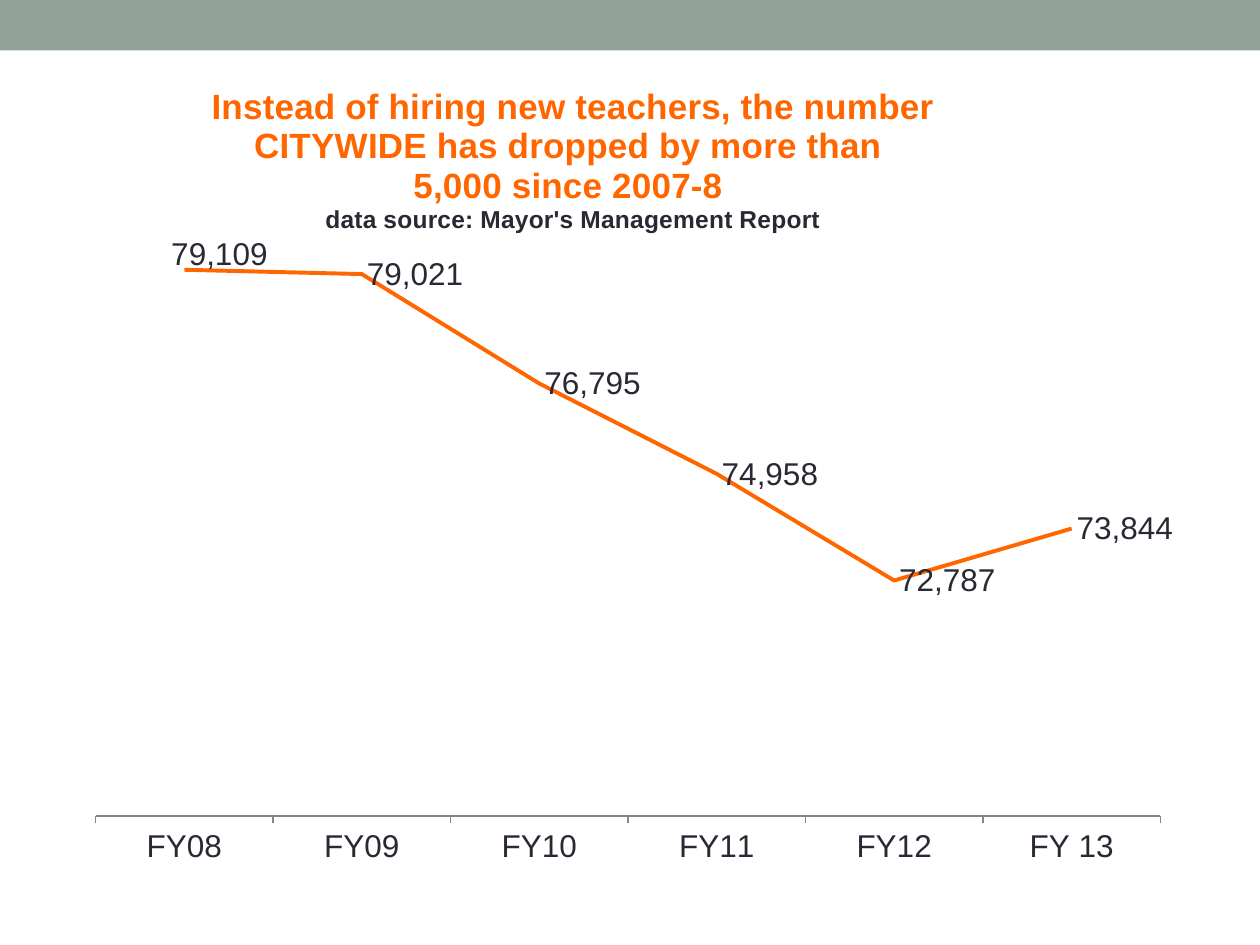
from dataclasses import dataclass

from lxml.etree import SubElement
from pptx import Presentation
from pptx.chart.data import CategoryChartData
from pptx.dml.color import RGBColor
from pptx.enum.chart import XL_CHART_TYPE as ChartType
from pptx.enum.chart import XL_LABEL_POSITION as LabelPos
from pptx.enum.chart import XL_TICK_MARK as Tick
from pptx.enum.shapes import MSO_SHAPE as Shape
from pptx.enum.text import PP_ALIGN as Align
from pptx.oxml.ns import qn
from pptx.util import Pt

ORANGE, DARK, SAGE, GREY = "FF6600", "292934", "93A299", "868686"


@dataclass
class TitleLine:
    text: str
    size: int
    color: str


TITLE = [
    TitleLine("Instead of hiring new teachers, the number CITYWIDE has dropped by more than ", 20, ORANGE),
    TitleLine("5,000 since 2007-8 ", 20, ORANGE),
    TitleLine("data source: Mayor's Management Report", 14, DARK),
]
TEACHERS = {
    "FY08": 79109,
    "FY09": 79021,
    "FY10": 76795,
    "FY11": 74958,
    "FY12": 72787,
    "FY 13": 73844,
}


def rgb(color: str) -> RGBColor:
    return RGBColor.from_string(color)


def set_font(font, size: int, color: str, bold: bool = False) -> None:
    for name, value in {"name": "Arial", "size": Pt(size), "bold": bold}.items():
        setattr(font, name, value)
    font.color.rgb = rgb(color)


def set_layout(parent, index: int, **values) -> None:
    for old in parent.findall(qn("c:layout")):
        parent.remove(old)
    layout = SubElement(parent, qn("c:layout"))
    manual = SubElement(layout, qn("c:manualLayout"))
    for tag, value in values.items():
        SubElement(manual, qn(f"c:{tag}")).set("val", str(value))
    parent.insert(index, layout)


def add_band(s) -> None:
    sp = s.shapes.add_shape(Shape.RECTANGLE, 0, 0, Pt(720), Pt(28.8))
    sp.shadow.inherit = False
    sp.fill.solid()
    sp.fill.fore_color.rgb = rgb(SAGE)
    sp.line.fill.background()


def add_title(chart) -> None:
    chart.has_title = True
    title = chart.chart_title
    title.include_in_layout = False
    tf = title.text_frame
    for i, line in enumerate(TITLE):
        p = tf.add_paragraph() if i else tf.paragraphs[0]
        p.alignment = Align.CENTER
        set_font(p.font, line.size, line.color, True)
        r = p.add_run()
        r.text = line.text
        set_font(r.font, line.size, line.color, True)
    set_layout(chart._chartSpace.chart.find(qn("c:title")), 1,
               xMode="edge", yMode="edge", x=0.13, y=0.01)


def format_axes(chart) -> None:
    cat = chart.category_axis
    cat.major_tick_mark = Tick.OUTSIDE
    cat.format.line.color.rgb = rgb(GREY)
    set_font(cat.tick_labels.font, 18, DARK)
    axis_format = {
        "minimum_scale": 68000,
        "maximum_scale": 80000,
        "has_major_gridlines": False,
        "visible": False,
    }
    for name, value in axis_format.items():
        setattr(chart.value_axis, name, value)


def format_series(chart) -> None:
    series = chart.plots[0].series[0]
    series.smooth = False
    series.format.line.color.rgb = rgb(ORANGE)
    series.format.line.width = Pt(2.25)
    labels = series.data_labels
    label_format = {
        "show_value": True,
        "number_format": "#,##0",
        "number_format_is_linked": False,
        "position": LabelPos.RIGHT,
    }
    for name, value in label_format.items():
        setattr(labels, name, value)
    set_font(labels.font, 18, DARK)
    first = series.points[0].data_label
    first.position = LabelPos.RIGHT
    set_font(first.font, 18, DARK)
    set_layout(labels._element.find(qn("c:dLbl")), 1, x=-0.016, y=-0.018)


def add_teacher_chart(s) -> None:
    data = CategoryChartData(number_format="#,##0")
    data.categories = list(TEACHERS)
    data.add_series("Series 1", list(TEACHERS.values()))
    frame = s.shapes.add_chart(ChartType.LINE, Pt(34.56), Pt(41.76), Pt(648), Pt(480.24), data)
    chart = frame.chart
    chart.has_legend = False
    set_font(chart.font, 10, DARK)
    add_title(chart)
    format_axes(chart)
    format_series(chart)
    set_layout(chart._chartSpace.chart.plotArea, 0, layoutTarget="inner",
               xMode="edge", yMode="edge", x=0.031, y=0.182, w=0.939, h=0.702)


def main() -> None:
    prs = Presentation()
    prs.slide_width, prs.slide_height = Pt(720), Pt(540)
    s = prs.slides.add_slide(prs.slide_layouts[6])
    add_band(s)
    add_teacher_chart(s)
    prs.save("out.pptx")


if __name__ == "__main__":
    main()
